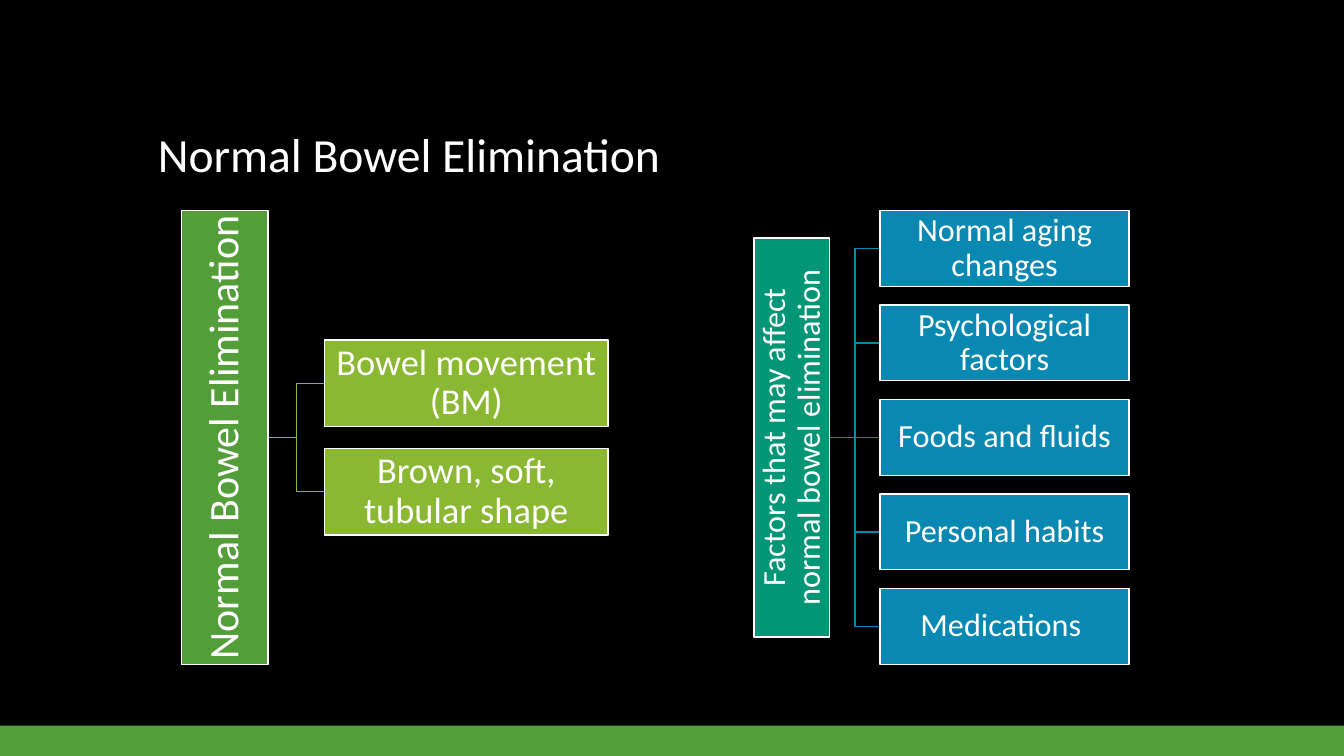
from dataclasses import dataclass

from lxml import etree
from pptx import Presentation
from pptx.dml.color import RGBColor
from pptx.enum.shapes import MSO_CONNECTOR, MSO_SHAPE
from pptx.enum.text import MSO_ANCHOR, MSO_AUTO_SIZE, PP_ALIGN
from pptx.oxml.ns import qn
from pptx.util import Inches, Pt

RECTANGLE = MSO_SHAPE.RECTANGLE
STRAIGHT, ELBOW = MSO_CONNECTOR.STRAIGHT, MSO_CONNECTOR.ELBOW
MIDDLE, BOTTOM = MSO_ANCHOR.MIDDLE, MSO_ANCHOR.BOTTOM
LEFT, CENTER = PP_ALIGN.LEFT, PP_ALIGN.CENTER
NO_AUTOFIT = MSO_AUTO_SIZE.NONE
TITLE_ONLY = 5

SLIDE_W, SLIDE_H = 13.33, 7.5
FOOTER_H = 0.04 * SLIDE_H
TREE_AXIS = 4.34
ROW_PITCH = 1.25  # row step as a multiple of box height


@dataclass(frozen=True)
class Theme:
    font: str = "Calibri"
    background: str = "000000"
    text: str = "FFFFFF"
    green: str = "549E39"
    lime: str = "8AB833"
    teal: str = "029676"
    blue: str = "0989B1"
    title_size: int = 34
    topic_size: int = 30
    detail_size: int = 26
    factor_size: int = 23
    line_width: int = 1


@dataclass(frozen=True)
class Tree:
    topic: str
    branches: tuple
    left: float
    topic_length: float
    box_height: float
    branch_left: float
    branch_width: float
    topic_color: str
    branch_color: str
    topic_size: int
    branch_size: int


THEME = Theme()

TREES = (
    Tree("Normal Bowel Elimination",
         ("Bowel movement (BM)", "Brown, soft, tubular shape"),
         left=1.8, topic_length=4.51, box_height=0.86,
         branch_left=3.22, branch_width=2.81,
         topic_color=THEME.green, branch_color=THEME.lime,
         topic_size=THEME.topic_size, branch_size=THEME.detail_size),
    Tree("Factors that may affect normal bowel elimination",
         ("Normal aging changes", "Psychological factors", "Foods and fluids",
          "Personal habits", "Medications "),
         left=7.48, topic_length=3.96, box_height=0.75,
         branch_left=8.73, branch_width=2.47,
         topic_color=THEME.teal, branch_color=THEME.blue,
         topic_size=THEME.factor_size, branch_size=THEME.factor_size),
)


def rgb(color):
    return RGBColor.from_string(color)


def write(frame, text, size, align, anchor):
    frame.text = text
    frame.word_wrap = True
    frame.auto_size = NO_AUTOFIT
    frame.vertical_anchor = anchor
    paragraph = frame.paragraphs[0]
    paragraph.alignment = align
    paragraph.line_spacing = 0.9
    font = paragraph.runs[0].font
    font.name, font.size = THEME.font, Pt(size)
    font.color.rgb = rgb(THEME.text)


def add_title(slide, text):
    title = slide.shapes.title
    title.left, title.top = Inches(0.11 * SLIDE_W), Inches(0.51)
    title.width, title.height = Inches(0.78 * SLIDE_W), Inches(0.18 * SLIDE_H)
    write(title.text_frame, text, THEME.title_size, LEFT, BOTTOM)


def add_bar(slide, left, top, width, height, color):
    bar = slide.shapes.add_shape(
        RECTANGLE, Inches(left), Inches(top), Inches(width), Inches(height))
    bar.shadow.inherit = False
    bar.fill.solid()
    bar.fill.fore_color.rgb = rgb(color)
    bar.line.fill.background()
    return bar


def add_box(slide, center_x, center_y, width, height, text, color, size):
    box = add_bar(slide, center_x - width / 2, center_y - height / 2,
                  width, height, color)
    box.line.color.rgb = rgb(THEME.text)
    box.line.width = Pt(THEME.line_width)
    frame = box.text_frame
    frame.margin_left = frame.margin_right = Inches(0.02)
    frame.margin_top = frame.margin_bottom = Inches(0.02)
    write(frame, text, size, CENTER, MIDDLE)
    return box


def add_link(slide, start_x, end_x, end_y, color):
    """Join the tree axis to the middle of a branch."""
    kind = STRAIGHT if end_y == TREE_AXIS else ELBOW
    link = slide.shapes.add_connector(
        kind, Inches(start_x), Inches(TREE_AXIS), Inches(end_x), Inches(end_y))
    link.line.color.rgb = rgb(color)
    link.line.width = Pt(THEME.line_width)
    etree.SubElement(link._element.spPr, qn("a:effectLst"))


def add_tree(slide, tree):
    middle_row = (len(tree.branches) - 1) / 2
    row_centers = [TREE_AXIS + (row - middle_row) * ROW_PITCH * tree.box_height
                   for row in range(len(tree.branches))]
    for center_y in row_centers:
        add_link(slide, tree.left + tree.box_height, tree.branch_left,
                 center_y, tree.branch_color)
    topic = add_box(slide, tree.left + tree.box_height / 2, TREE_AXIS,
                    tree.topic_length, tree.box_height,
                    tree.topic, tree.topic_color, tree.topic_size)
    topic.rotation = 270
    for branch, center_y in zip(tree.branches, row_centers):
        add_box(slide, tree.branch_left + tree.branch_width / 2, center_y,
                tree.branch_width, tree.box_height,
                branch, tree.branch_color, tree.branch_size)


def main():
    deck = Presentation()
    deck.slide_width, deck.slide_height = Inches(SLIDE_W), Inches(SLIDE_H)
    slide = deck.slides.add_slide(deck.slide_layouts[TITLE_ONLY])
    slide.background.fill.solid()
    slide.background.fill.fore_color.rgb = rgb(THEME.background)
    add_bar(slide, 0, SLIDE_H - FOOTER_H, SLIDE_W, FOOTER_H, THEME.green)
    add_title(slide, "Normal Bowel Elimination")
    for tree in TREES:
        add_tree(slide, tree)
    deck.save("out.pptx")


if __name__ == "__main__":
    main()
